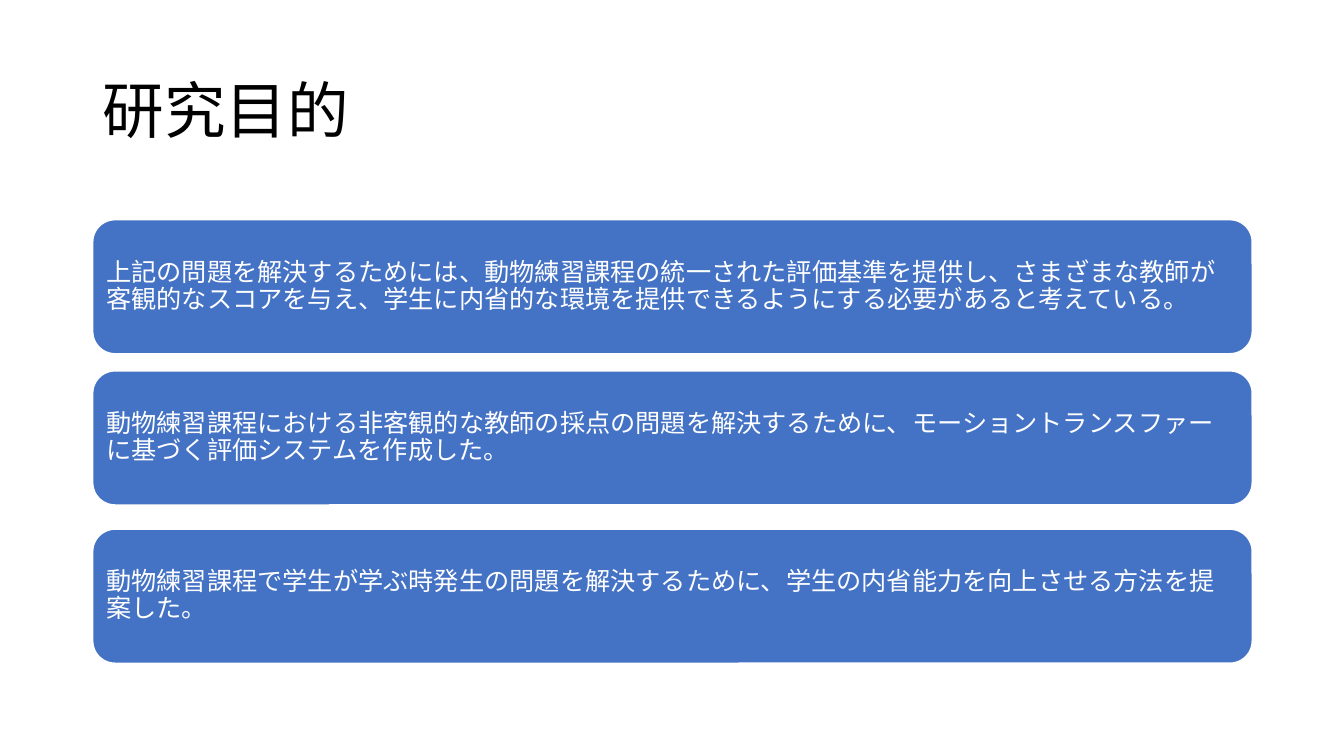
import pptx
import pptx.dml.color
import pptx.enum.shapes
import pptx.enum.text
import pptx.oxml
import pptx.oxml.ns
import pptx.util
from lxml import etree

Inches = pptx.util.Inches
Pt = pptx.util.Pt
RGBColor = pptx.dml.color.RGBColor
qn = pptx.oxml.ns.qn

BLACK = RGBColor(0x00, 0x00, 0x00)
WHITE = RGBColor(0xFF, 0xFF, 0xFF)
BLUE = RGBColor(0x44, 0x72, 0xC4)
FACE = "Noto Sans CJK JP"
LEFT = Inches(0.92)
WIDTH = Inches(11.5)

AIMS = [
    (2.18, "上記の問題を解決するためには、動物練習課程の統一された評価基準を提供し、さまざまな教師が客観的なスコアを与え、学生に内省的な環境を提供できるようにする必要があると考えている。"),
    (3.68, "動物練習課程における非客観的な教師の採点の問題を解決するために、モーショントランスファーに基づく評価システムを作成した。"),
    (5.25, "動物練習課程で学生が学ぶ時発生の問題を解決するために、学生の内省能力を向上させる方法を提案した。"),
]


def write(shape, text, size, color):
    frame = shape.text_frame
    frame.word_wrap = True
    frame.vertical_anchor = pptx.enum.text.MSO_ANCHOR.MIDDLE
    para = frame.paragraphs[0]
    para.text = text
    para.alignment = pptx.enum.text.PP_ALIGN.LEFT
    para.line_spacing = 0.9
    font = para.font
    font.size = Pt(size)
    font.name = FACE
    font.color.rgb = color
    props = para._p.pPr.find(qn("a:defRPr"))
    etree.SubElement(props, qn("a:ea"), typeface=FACE)
    return frame


def add_title(slide, text):
    box = slide.shapes.add_textbox(LEFT, Inches(0.4), WIDTH, Inches(1.45))
    write(box, text, 44, BLACK)


def add_card(slide, top, text):
    card = slide.shapes.add_shape(
        pptx.enum.shapes.MSO_SHAPE.ROUNDED_RECTANGLE,
        LEFT, Inches(top), WIDTH, Inches(1.33))
    card.shadow.inherit = False
    card.fill.solid()
    card.fill.fore_color.rgb = BLUE
    card.line.color.rgb = WHITE
    card.line.width = Pt(1)
    frame = write(card, text, 18, WHITE)
    frame.margin_left = frame.margin_right = Inches(0.07)
    frame.margin_top = frame.margin_bottom = Inches(0.07)


def main():
    deck = pptx.Presentation()
    deck.slide_width = Inches(13.33)
    deck.slide_height = Inches(7.5)
    slide = deck.slides.add_slide(deck.slide_layouts[6])
    add_title(slide, "研究目的")
    for top, text in AIMS:
        add_card(slide, top, text)
    deck.save("out.pptx")


if __name__ == "__main__":
    main()
